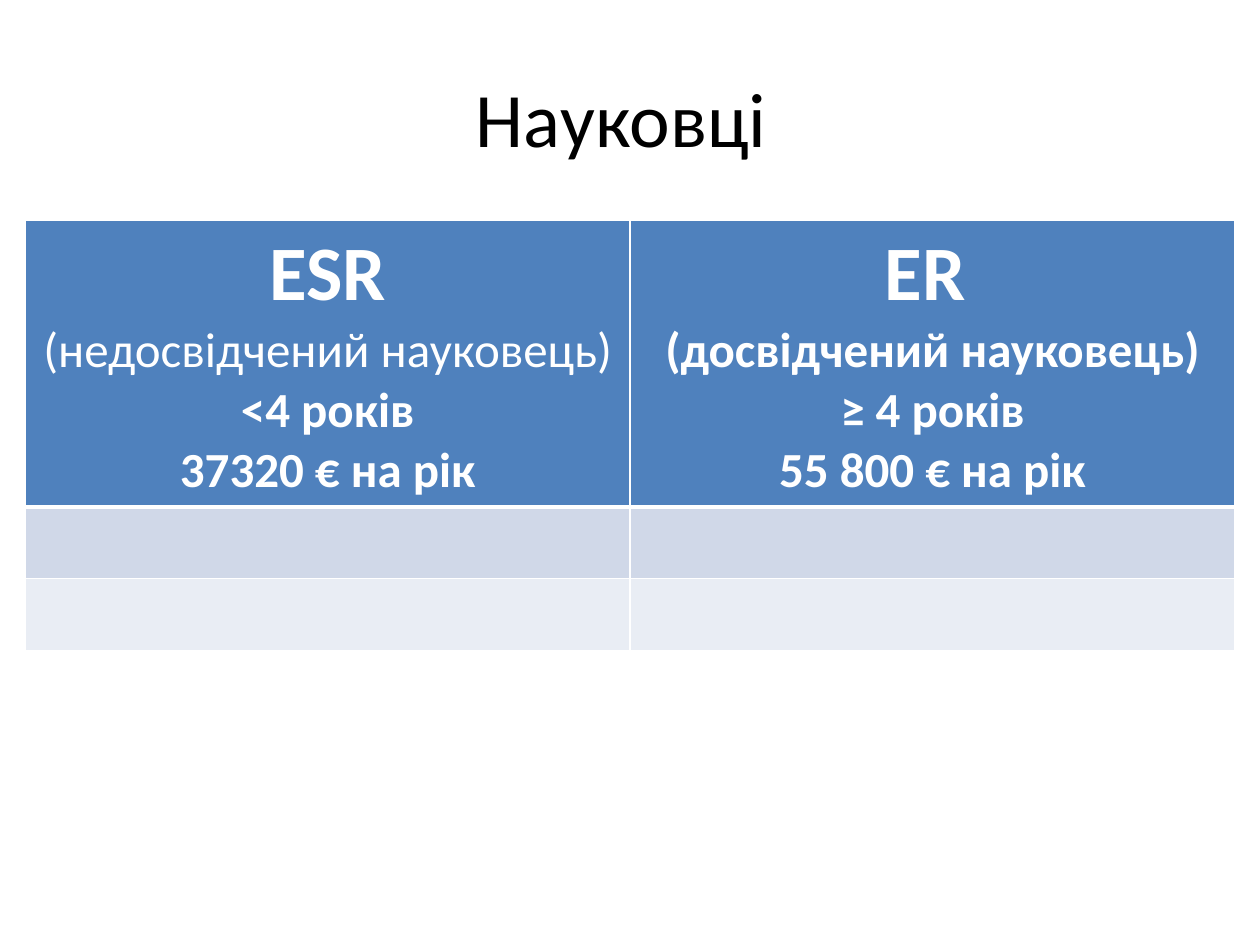
from dataclasses import dataclass

from lxml.etree import SubElement
from pptx import Presentation
from pptx.dml.color import RGBColor
from pptx.enum.text import MSO_ANCHOR, PP_ALIGN
from pptx.oxml.ns import qn
from pptx.util import Inches, Pt


@dataclass(frozen=True)
class Theme:
    font: str = "Calibri"
    ink: str = "000000"
    paper: str = "FFFFFF"
    header: str = "4F81BD"
    bands: tuple = ("D0D8E8", "E9EDF4")
    large: int = 44
    medium: int = 36
    body: int = 28
    thin: int = 1
    thick: int = 3


THEME = Theme()
TITLE = "Науковці "
HEADERS = [
    [
        [("ESR", THEME.large, True)],
        [("(недосвідчений науковець)", THEME.body, False)],
        [("<4 років", THEME.body, True)],
        [("37320 € на рік", THEME.body, True)],
    ],
    [
        [("ER", THEME.large, True), (" ", THEME.medium, True)],
        [("(досвідчений науковець)", THEME.body, True)],
        [("≥ 4 років", THEME.body, True)],
        [("55 800 € на рік", THEME.body, True)],
    ],
]
WIDTH, HEIGHT = 10, 7.5
MARGIN, TABLE_TOP = 0.2, 1.75
TABLE_WIDTH = WIDTH - 2 * MARGIN
ROW_HEIGHTS = [2.27] + [0.57] * len(THEME.bands)


def add_text(para, text, size, color, bold=False):
    span = para.add_run()
    span.text = text
    span.font.name = THEME.font
    span.font.size = Pt(size)
    span.font.bold = bold
    span.font.color.rgb = RGBColor.from_string(color)


def set_borders(cell, top, bottom):
    properties = cell._tc.get_or_add_tcPr()
    widths = {"lnL": THEME.thin, "lnR": THEME.thin, "lnT": top, "lnB": bottom}
    for side, width in widths.items():
        line = SubElement(properties, qn(f"a:{side}"), w=str(Pt(width)))
        fill = SubElement(line, qn("a:solidFill"))
        SubElement(fill, qn("a:srgbClr"), val=THEME.paper)


def add_title(page):
    box = page.shapes.title
    box.left, box.top = Inches(0.05 * WIDTH), Inches(0.04 * HEIGHT)
    box.width, box.height = Inches(0.9 * WIDTH), Inches(1.25)
    box.text_frame.vertical_anchor = MSO_ANCHOR.MIDDLE
    para = box.text_frame.paragraphs[0]
    para.alignment = PP_ALIGN.CENTER
    add_text(para, TITLE, THEME.large, THEME.ink)


def add_header(cell, lines):
    para = cell.text_frame.paragraphs[0]
    para.alignment = PP_ALIGN.CENTER
    for index, line in enumerate(lines):
        if index:
            para.add_line_break()
        for text, size, bold in line:
            add_text(para, text, size, THEME.paper, bold=bold)


def add_salary_table(page):
    table = page.shapes.add_table(
        len(ROW_HEIGHTS), len(HEADERS), Inches(MARGIN), Inches(TABLE_TOP),
        Inches(TABLE_WIDTH), Inches(sum(ROW_HEIGHTS)),
    ).table
    for column in table.columns:
        column.width = Inches(TABLE_WIDTH / len(HEADERS))
    for index, (height, color) in enumerate(zip(ROW_HEIGHTS, (THEME.header, *THEME.bands))):
        row = table.rows[index]
        row.height = Inches(height)
        for cell in row.cells:
            set_borders(
                cell,
                top=THEME.thick if index == 1 else THEME.thin,
                bottom=THEME.thick if index == 0 else THEME.thin,
            )
            cell.fill.solid()
            cell.fill.fore_color.rgb = RGBColor.from_string(color)
    for cell, lines in zip(table.rows[0].cells, HEADERS):
        add_header(cell, lines)


def main():
    deck = Presentation()
    deck.slide_width, deck.slide_height = Inches(WIDTH), Inches(HEIGHT)
    page = deck.slides.add_slide(deck.slide_layouts[5])
    add_title(page)
    add_salary_table(page)
    deck.save("out.pptx")


if __name__ == "__main__":
    main()
